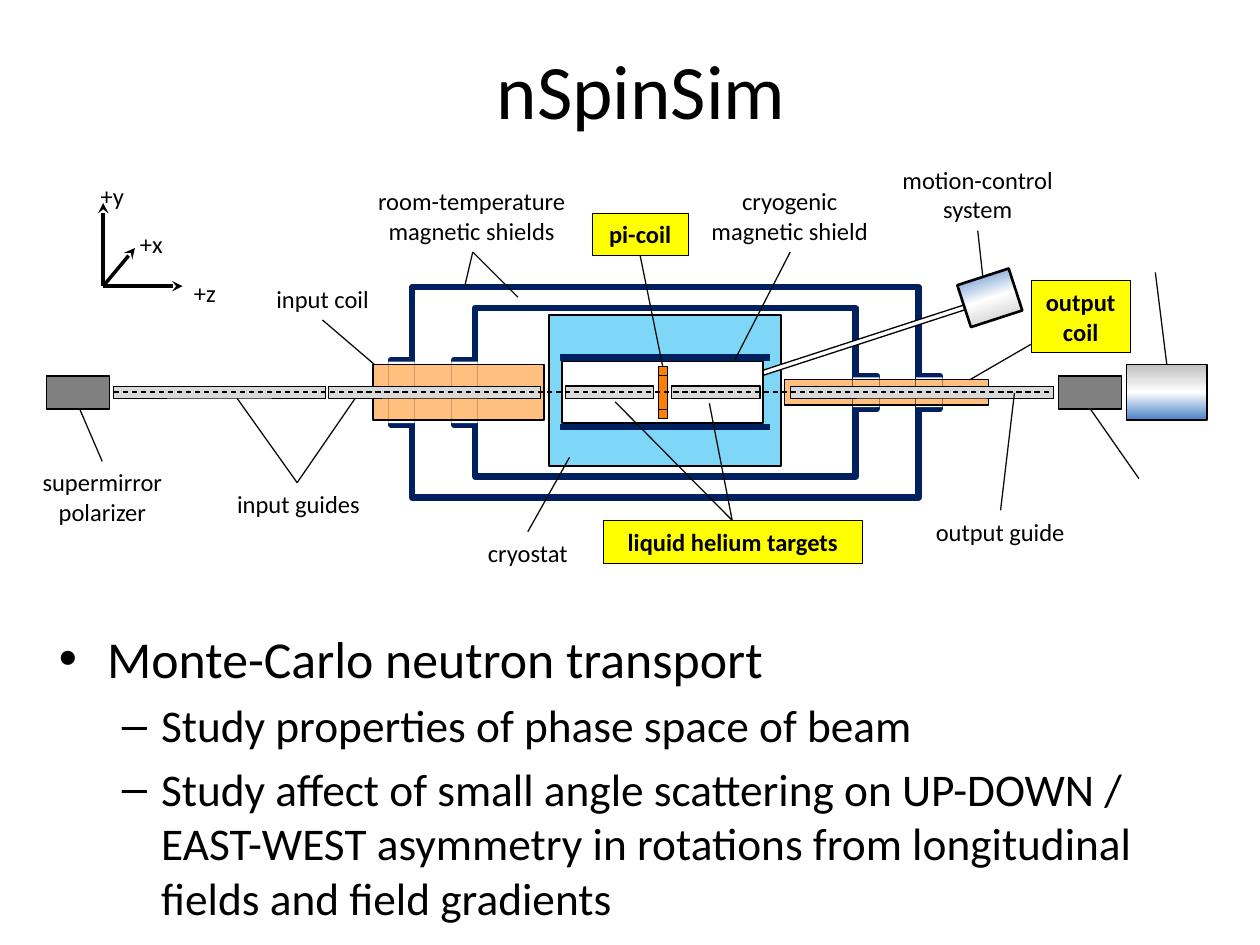
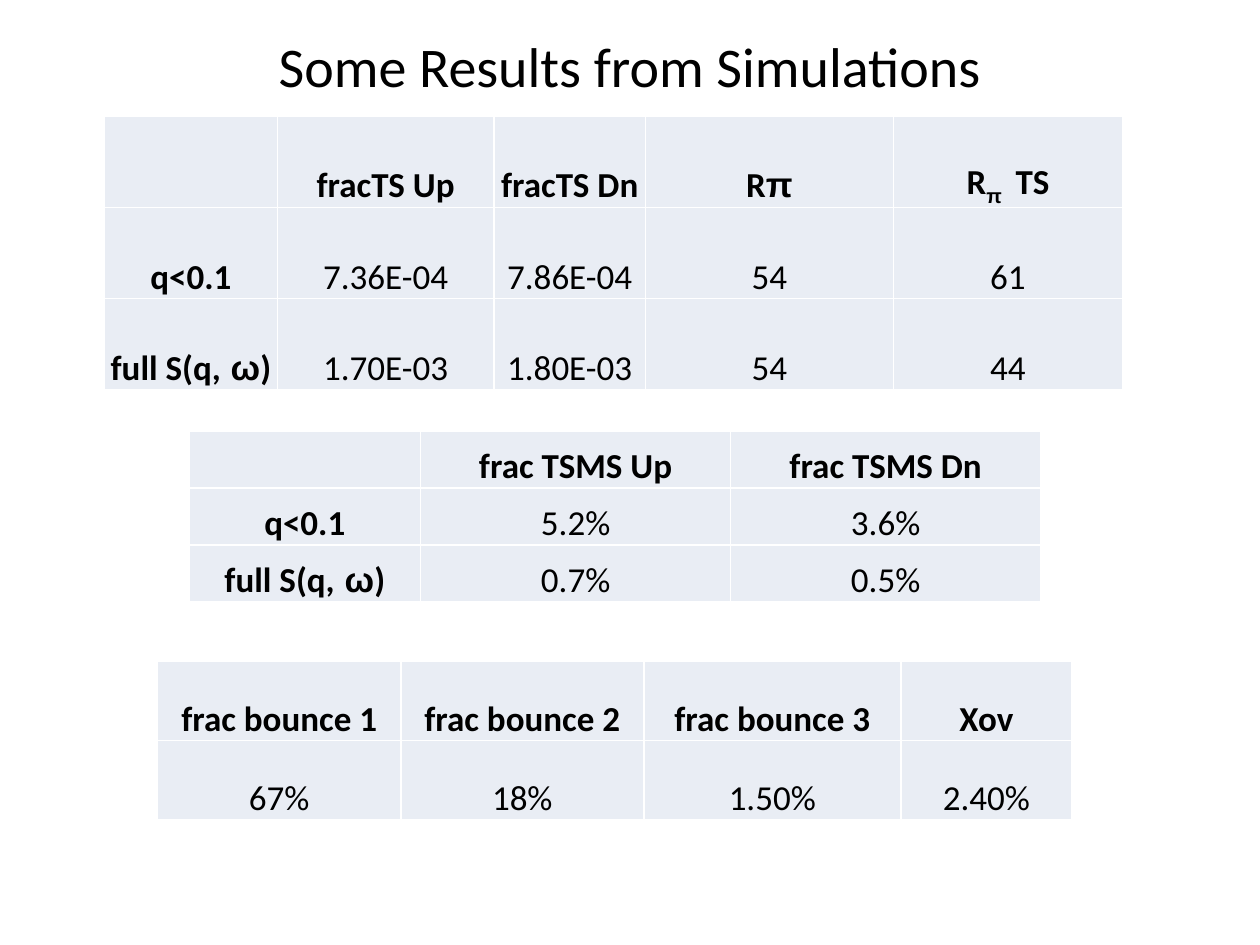
import lxml.etree
import pptx
import pptx.dml.color
import pptx.enum.dml
import pptx.enum.shapes
import pptx.enum.text
import pptx.oxml
import pptx.oxml.ns
import pptx.util

Cm = pptx.util.Cm
Pt = pptx.util.Pt
RGBColor = pptx.dml.color.RGBColor
ALIGN = pptx.enum.text.PP_ALIGN
ANCHOR = pptx.enum.text.MSO_ANCHOR

BLACK = RGBColor(0x00, 0x00, 0x00)
WHITE = RGBColor(0xFF, 0xFF, 0xFF)
NAVY = RGBColor(0x00, 0x20, 0x60)
SKY = RGBColor(0x00, 0xB0, 0xF0)
ORANGE = RGBColor(0xFF, 0x80, 0x00)
LIGHT_GRAY = RGBColor(0xD9, 0xD9, 0xD9)
SILVER = RGBColor(0xBF, 0xBF, 0xBF)
GRAY = RGBColor(0x80, 0x80, 0x80)
STEEL_BLUE = RGBColor(0x47, 0x80, 0xC5)
YELLOW = RGBColor(0xFF, 0xFF, 0x00)
LEADER = RGBColor(0x0D, 0x0D, 0x0D)
CELL = RGBColor(0xE9, 0xED, 0xF4)

FONT = "Calibri"
GREEK_FONT = "Arial"
GREEK = "πω"
BEAM_Y = 7.91
SHIELD_LINE = 3.75
TILT = -18

LABELS = [
    (0.58, 9.30, 2.97, ["supermirror", "polarizer"]),
    (7.34, 3.63, 4.34, ["room-temperature", "magnetic shields"]),
    (5.31, 5.61, 2.39, ["input coil"]),
    (4.47, 9.73, 3.10, ["input guides"]),
    (17.93, 3.20, 3.56, ["motion-control", "system"]),
    (18.59, 10.29, 3.15, ["output guide"]),
    (14.00, 3.63, 3.84, ["cryogenic", "magnetic shield"]),
    (9.55, 10.72, 2.18, ["cryostat"]),
]
HIGHLIGHTS = [
    (20.78, 5.66, 2.01, 1.45, ["output", "coil"]),
    (11.94, 4.29, 1.93, 0.86, ["pi-coil"]),
    (12.17, 10.49, 5.21, 0.86, ["liquid helium targets"]),
]
LEADERS = [
    (19.71, 4.65, 19.81, 5.56),
    (9.53, 5.08, 9.37, 5.77),
    (9.53, 5.08, 10.44, 5.99),
    (7.54, 7.34, 6.50, 6.45),
    (5.99, 9.73, 4.78, 8.03),
    (5.99, 9.73, 7.16, 8.03),
    (1.60, 8.23, 2.06, 9.30),
    (23.52, 7.34, 23.29, 5.49),
    (19.56, 7.65, 21.18, 6.71),
    (20.45, 7.92, 20.17, 10.29),
    (21.97, 8.23, 22.96, 9.65),
    (15.93, 5.08, 14.81, 7.26),
    (12.40, 8.10, 14.76, 10.49),
    (14.30, 8.13, 14.76, 10.49),
    (13.36, 7.39, 12.90, 5.13),
    (10.64, 10.72, 11.48, 9.22),
]
AXES = [
    (2.08, 4.09, "+y", 1.78, 3.53),
    (2.72, 5.00, "+x", 2.57, 4.50),
    (3.68, 5.77, "+z", 3.66, 5.49),
]
BODY = [
    ("Monte-Carlo neutron transport", 0, 29.6, "•", 0.97, 0.97),
    ("Study properties of phase space of beam", 1, 25.9, "–", 2.06, 0.79),
    ("Study affect of small angle scattering on UP-DOWN / EAST-WEST asymmetry "
     "in rotations from longitudinal fields and field gradients", 1, 25.9, "–", 2.06, 0.79),
]
FULL_S = ("full S(q,", " ω", ")")
TRANSMISSION = [
    ("", "fracTS Up", "fracTS Dn", ("R", "π"), ("R", "_π ", " TS")),
    ("q<0.1", "7.36E-04", "7.86E-04", "54", "61"),
    (FULL_S, "1.70E-03", "1.80E-03", "54", "44"),
]
MULTIPLE_SCATTERING = [
    ("", "frac TSMS Up", "frac TSMS Dn"),
    ("q<0.1", "5.2%", "3.6%"),
    (FULL_S, "0.7%", "0.5%"),
]
BOUNCES = [
    ("frac bounce 1", "frac bounce 2", "frac bounce 3", "Xov"),
    ("67%", "18%", "1.50%", "2.40%"),
]


def add_element(parent, tag, **attributes):
    return lxml.etree.SubElement(parent, pptx.oxml.ns.qn(tag), attributes)


def style_paragraph(paragraph, size, bold=False, align=ALIGN.CENTER):
    paragraph.alignment = align
    paragraph.font.name = FONT
    paragraph.font.size = Pt(size)
    paragraph.font.bold = bold
    paragraph.font.color.rgb = BLACK


def write_lines(frame, lines, size, bold=False, align=ALIGN.CENTER):
    for index, line in enumerate(lines):
        paragraph = frame.paragraphs[0] if index == 0 else frame.add_paragraph()
        paragraph.text = line
        style_paragraph(paragraph, size, bold, align)


def add_text(slide, left, top, width, height, lines, size=14, align=ALIGN.CENTER, wrap=False):
    shape = slide.shapes.add_textbox(Cm(left), Cm(top), Cm(width), Cm(height))
    shape.text_frame.word_wrap = wrap
    write_lines(shape.text_frame, lines, size, align=align)
    return shape


def add_title(slide, text, left, height, size):
    shape = add_text(slide, left, 0.2, 22.86, height, [text], size, wrap=True)
    shape.text_frame.vertical_anchor = ANCHOR.MIDDLE


def add_box(slide, left, top, width, height, fill, line=None, alpha=None, rotation=0):
    shape = slide.shapes.add_shape(
        pptx.enum.shapes.MSO_SHAPE.RECTANGLE, Cm(left), Cm(top), Cm(width), Cm(height))
    shape.shadow.inherit = False
    shape.rotation = rotation
    shape.fill.solid()
    shape.fill.fore_color.rgb = fill
    if alpha:
        color = shape.fill._xPr.find(".//" + pptx.oxml.ns.qn("a:srgbClr"))
        add_element(color, "a:alpha", val=str(alpha * 1000))
    if line:
        shape.line.color.rgb = NAVY if line == SHIELD_LINE else BLACK
        shape.line.width = Pt(line)
    else:
        shape.line.fill.background()
    return shape


def add_beam_box(slide, left, width, height, fill, line=None, alpha=None):
    return add_box(slide, left, BEAM_Y - height / 2, width, height, fill, line, alpha)


def set_gradient(shape, angle):
    shape.fill.gradient()
    gradient = shape._element.spPr.find(pptx.oxml.ns.qn("a:gradFill"))
    for child in list(gradient):
        gradient.remove(child)
    stops = add_element(gradient, "a:gsLst")
    for position, color in ((0, SILVER), (50, WHITE), (100, STEEL_BLUE)):
        stop = add_element(stops, "a:gs", pos=str(position * 1000))
        add_element(stop, "a:srgbClr", val=str(color))
    add_element(gradient, "a:lin", ang=str(angle * 60000), scaled="0")


def add_line(slide, x1, y1, x2, y2, color=LEADER, width=0.75, arrow=False, dash=False):
    connector = slide.shapes.add_connector(
        pptx.enum.shapes.MSO_CONNECTOR.STRAIGHT, Cm(x1), Cm(y1), Cm(x2), Cm(y2))
    connector.line.color.rgb = color
    connector.line.width = Pt(width)
    if dash:
        connector.line.dash_style = pptx.enum.dml.MSO_LINE.DASH
    if arrow:
        add_element(connector.line._get_or_add_ln(), "a:tailEnd", type="stealth")
    add_element(connector._element.spPr, "a:effectLst")


def add_shield(slide, left, width, height):
    neck, overlap, inset = 0.43, 0.05, 0.03
    add_beam_box(slide, left, width, height, WHITE, SHIELD_LINE)
    necks = ((left - neck, 1.3), (left + width, 0.66))
    for neck_left, neck_height in necks:
        add_beam_box(slide, neck_left, neck, neck_height, WHITE, SHIELD_LINE)
    for neck_left, neck_height in necks:
        add_beam_box(slide, neck_left - overlap, neck + 2 * overlap,
                     neck_height - 2 * inset, WHITE)


def add_apparatus(slide):
    add_shield(slide, 8.31, 10.21, 4.24)
    add_shield(slide, 9.58, 7.67, 3.4)
    add_box(slide, 11.07, 6.35, 4.67, 3.05, SKY, 1, alpha=50)
    add_box(slide, 15.27, 6.81, 4.27, 0.1, WHITE, 0.75, rotation=TILT)
    add_beam_box(slide, 11.33, 4.06, 1.24, WHITE, 1)
    for target_left in (11.4, 13.54):
        add_beam_box(slide, target_left, 1.78, 0.25, LIGHT_GRAY, 0.75)
    for coil_top, coil_height in ((7.54, 0.71), (7.39, 0.18), (8.26, 0.18)):
        add_box(slide, 13.28, coil_top, 0.18, coil_height, ORANGE, 0.25)
    add_beam_box(slide, 7.52, 3.45, 1.12, ORANGE, 0.75, alpha=50)
    for guide_left in (6.63, 2.29):
        add_beam_box(slide, guide_left, 4.27, 0.23, LIGHT_GRAY, 0.5)
    add_beam_box(slide, 15.82, 4.11, 0.51, ORANGE, 0.75, alpha=50)
    add_beam_box(slide, 15.93, 5.31, 0.23, LIGHT_GRAY, 0.5)
    for polarizer_left in (0.94, 21.34):
        add_beam_box(slide, polarizer_left, 1.27, 0.66, GRAY, 1)
    detector = add_beam_box(slide, 22.71, 1.63, 1.12, WHITE, 1)
    set_gradient(detector, 90)
    motor = add_box(slide, 19.41, 5.56, 1.09, 0.89, WHITE, 1.5, rotation=TILT)
    set_gradient(motor, 270)
    for shield_y in (7.21, 8.61):
        add_line(slide, 11.28, shield_y, 15.52, shield_y, NAVY, SHIELD_LINE)


def add_annotations(slide):
    for leader in LEADERS:
        add_line(slide, *leader)
    for left, top, width, lines in LABELS:
        add_text(slide, left, top, width, 0.23 + 0.61 * len(lines), lines)
    for left, top, width, height, lines in HIGHLIGHTS:
        shape = add_box(slide, left, top, width, height, YELLOW, 0.25)
        shape.text_frame.word_wrap = False
        write_lines(shape.text_frame, lines, 14, bold=True)
    for tip_x, tip_y, name, left, top in AXES:
        add_line(slide, 2.08, 5.77, tip_x, tip_y, BLACK, 2, arrow=True)
        add_text(slide, left, top, 1.02, 0.84, [name], align=ALIGN.LEFT)
    add_line(slide, 2.29, 7.9, 21.23, 7.9, BLACK, dash=True)


def add_bullets(slide, left, top, width, height):
    frame = add_text(slide, left, top, width, height, [item[0] for item in BODY],
                     align=ALIGN.LEFT, wrap=True).text_frame
    for paragraph, item in zip(frame.paragraphs, BODY):
        text, level, size, bullet, margin, hanging = item
        paragraph.level = level
        paragraph.font.size = Pt(size)
        paragraph.space_before = Pt(round(size * 0.2, 1))
        properties = paragraph._p.get_or_add_pPr()
        properties.set("marL", str(Cm(margin)))
        properties.set("indent", str(-Cm(hanging)))
        font = pptx.oxml.parse_xml(
            '<a:buFont %s typeface="Arial"/>' % pptx.oxml.ns.nsdecls("a"))
        character = pptx.oxml.parse_xml(
            '<a:buChar %s char="%s"/>' % (pptx.oxml.ns.nsdecls("a"), bullet))
        run_defaults = properties.find(pptx.oxml.ns.qn("a:defRPr"))
        run_defaults.addprevious(font)
        run_defaults.addprevious(character)


def fill_cell(cell, content, bold):
    cell.margin_left = cell.margin_right = cell.margin_top = Cm(0.03)
    cell.margin_bottom = 0
    cell.vertical_anchor = ANCHOR.BOTTOM
    for side in ("a:lnL", "a:lnR", "a:lnT", "a:lnB"):
        border = add_element(cell._tc.get_or_add_tcPr(), side, w=str(Pt(1)))
        add_element(add_element(border, "a:solidFill"), "a:srgbClr", val=str(WHITE))
    cell.fill.solid()
    cell.fill.fore_color.rgb = CELL
    paragraph = cell.text_frame.paragraphs[0]
    style_paragraph(paragraph, 20, bold)
    for part in [content] if isinstance(content, str) else content:
        if not part:
            continue
        run = paragraph.add_run()
        run.text = part.lstrip("_")
        if any(letter in GREEK for letter in part):
            run.font.name = GREEK_FONT
        if part.startswith("_"):
            run.font._element.set("baseline", "-25000")


def add_results_table(slide, left, top, widths, row_height, rows):
    table = slide.shapes.add_table(
        len(rows), len(widths), Cm(left), Cm(top),
        Cm(sum(widths)), Cm(row_height * len(rows))).table
    table.first_row = table.horz_banding = False
    for column, width in zip(table.columns, widths):
        column.width = Cm(width)
    has_row_labels = rows[0][0] == ""
    for row_index, row in enumerate(rows):
        table.rows[row_index].height = Cm(row_height)
        for column_index, content in enumerate(row):
            bold = row_index == 0 or (has_row_labels and column_index == 0)
            fill_cell(table.cell(row_index, column_index), content, bold)


def main():
    presentation = pptx.Presentation()
    presentation.slide_width = Cm(25.4)
    presentation.slide_height = Cm(19.05)
    blank = presentation.slide_layouts[6]

    slide = presentation.slides.add_slide(blank)
    add_title(slide, "nSpinSim", 1.5, 3.18, 44)
    add_bullets(slide, 0.94, 12.5, 23.5, 5.51)
    add_apparatus(slide)
    add_annotations(slide)

    slide = presentation.slides.add_slide(blank)
    add_title(slide, "Some Results from Simulations", 1.27, 2.21, 32)
    add_results_table(slide, 2.11, 2.34, (3.48, 4.37, 3.05, 5.0, 4.62), 1.84, TRANSMISSION)
    add_results_table(slide, 3.81, 8.69, (4.67, 6.25, 6.25), 1.15, MULTIPLE_SCATTERING)
    add_results_table(slide, 3.18, 13.34, (4.9, 4.9, 5.18, 3.45), 1.59, BOUNCES)
    presentation.save("out.pptx")


if __name__ == "__main__":
    main()
